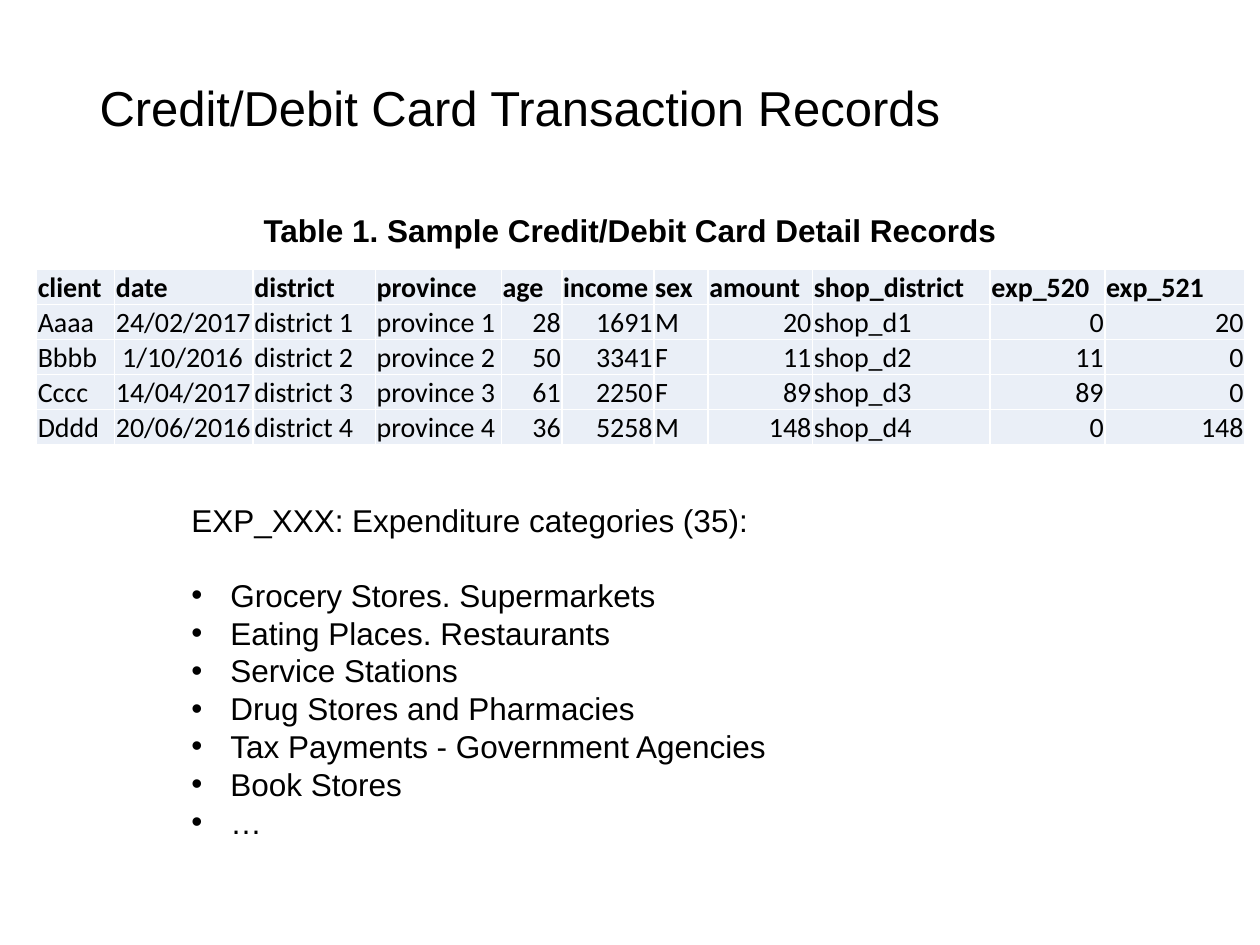
from dataclasses import dataclass

from lxml.etree import SubElement
from pptx import Presentation
from pptx.dml.color import RGBColor
from pptx.enum.text import MSO_ANCHOR, MSO_AUTO_SIZE, PP_ALIGN
from pptx.oxml.ns import qn
from pptx.util import Inches, Pt


@dataclass(frozen=True)
class Theme:
    text: str = "000000"
    cell: str = "EAEFF7"
    border: str = "FFFFFF"
    font: str = "Arial"
    table_font: str = "Calibri"
    title_size: int = 28
    body_size: int = 18
    table_size: int = 16


THEME = Theme()

COLUMNS = {
    "client": 0.62, "date": 1.1, "district": 0.97, "province": 1,
    "age": 0.48, "income": 0.73, "sex": 0.43, "amount": 0.83,
    "shop_district": 1.41, "exp_520": 0.91, "exp_521": 1.11,
}
RECORDS = [
    ("Aaaa", "24/02/2017", "district 1", "province 1", "28", "1691", "M", "20", "shop_d1", "0", "20"),
    ("Bbbb", " 1/10/2016", "district 2", "province 2", "50", "3341", "F", "11", "shop_d2", "11", "0"),
    ("Cccc", "14/04/2017", "district 3", "province 3", "61", "2250", "F", "89", "shop_d3", "89", "0"),
    ("Dddd", "20/06/2016", "district 4", "province 4", "36", "5258", "M", "148", "shop_d4", "0", "148"),
]
CATEGORIES = [
    "Grocery Stores. Supermarkets",
    "Eating Places. Restaurants",
    "Service Stations",
    "Drug Stores and Pharmacies",
    "Tax Payments - Government Agencies",
    "Book Stores",
    "…",
]


def write(paragraph, text, size=THEME.body_size, font=THEME.font, bold=False,
          align=PP_ALIGN.LEFT, line_spacing=None, space_before=0):
    paragraph.alignment = align
    paragraph.line_spacing = line_spacing
    paragraph.space_before = Pt(space_before)
    run = paragraph.add_run()
    run.text = text
    run.font.name = font
    run.font.size = Pt(size)
    run.font.bold = bold
    run.font.color.rgb = RGBColor.from_string(THEME.text)


def add_bullet(paragraph, indent=0.31):
    properties = paragraph._p.get_or_add_pPr()
    properties.set("marL", str(Inches(indent)))
    properties.set("indent", str(-Inches(indent)))
    SubElement(properties, qn("a:buFont"), typeface=THEME.font)
    SubElement(properties, qn("a:buChar"), char="•")


def add_title(slide, text):
    title = slide.shapes.title
    title.left, title.top = Inches(0.69), Inches(0.4)
    title.width, title.height = Inches(8.62), Inches(0.95)
    title.text_frame.vertical_anchor = MSO_ANCHOR.MIDDLE
    write(title.text_frame.paragraphs[0], text, size=THEME.title_size, line_spacing=0.9)


def add_text_box(slide, left, top, width, height):
    box = slide.shapes.add_textbox(Inches(left), Inches(top), Inches(width), Inches(height))
    box.text_frame.word_wrap = True
    return box.text_frame


def add_caption(slide, text):
    frame = add_text_box(slide, 0.69, 1.66, 8.62, 4.97)
    write(frame.paragraphs[0], text, bold=True, align=PP_ALIGN.CENTER, line_spacing=0.9)


def add_category_list(slide, heading, categories):
    frame = add_text_box(slide, 1.42, 3.93, 5.56, 3.13)
    frame.auto_size = MSO_AUTO_SIZE.SHAPE_TO_FIT_TEXT
    write(frame.paragraphs[0], heading)
    for index, category in enumerate(categories):
        paragraph = frame.add_paragraph()
        add_bullet(paragraph)
        write(paragraph, category, space_before=0 if index else 21)


def add_borders(cell):
    properties = cell._tc.get_or_add_tcPr()
    for side in ("lnL", "lnR", "lnT", "lnB"):
        line = SubElement(properties, qn(f"a:{side}"), w=str(Pt(1)))
        fill = SubElement(line, qn("a:solidFill"))
        SubElement(fill, qn("a:srgbClr"), val=THEME.border)


def format_cell(cell, text, bold):
    cell.margin_left = cell.margin_right = cell.margin_top = Inches(0.01)
    cell.margin_bottom = 0
    cell.vertical_anchor = MSO_ANCHOR.BOTTOM
    add_borders(cell)
    cell.fill.solid()
    cell.fill.fore_color.rgb = RGBColor.from_string(THEME.cell)
    align = PP_ALIGN.RIGHT if text.isdigit() else PP_ALIGN.LEFT
    write(cell.text_frame.paragraphs[0], text, size=THEME.table_size,
          font=THEME.table_font, bold=bold, align=align)


def add_record_table(slide, columns, records):
    rows = [tuple(columns), *records]
    table = slide.shapes.add_table(
        len(rows), len(columns), Inches(0.29), Inches(2.14), Inches(9.6), Inches(1.39)
    ).table
    table.horz_banding = False
    for column, width in zip(table.columns, columns.values()):
        column.width = Inches(width)
    for row_index, row in enumerate(rows):
        for column_index, text in enumerate(row):
            format_cell(table.cell(row_index, column_index), text, bold=row_index == 0)


def main():
    presentation = Presentation()
    presentation.slide_width, presentation.slide_height = Inches(10), Inches(7.5)
    slide = presentation.slides.add_slide(presentation.slide_layouts.get_by_name("Title Only"))
    add_title(slide, "Credit/Debit Card Transaction Records")
    add_caption(slide, "Table 1. Sample Credit/Debit Card Detail Records")
    add_category_list(slide, "EXP_XXX: Expenditure categories (35):", CATEGORIES)
    add_record_table(slide, COLUMNS, RECORDS)
    presentation.save("out.pptx")


if __name__ == "__main__":
    main()
